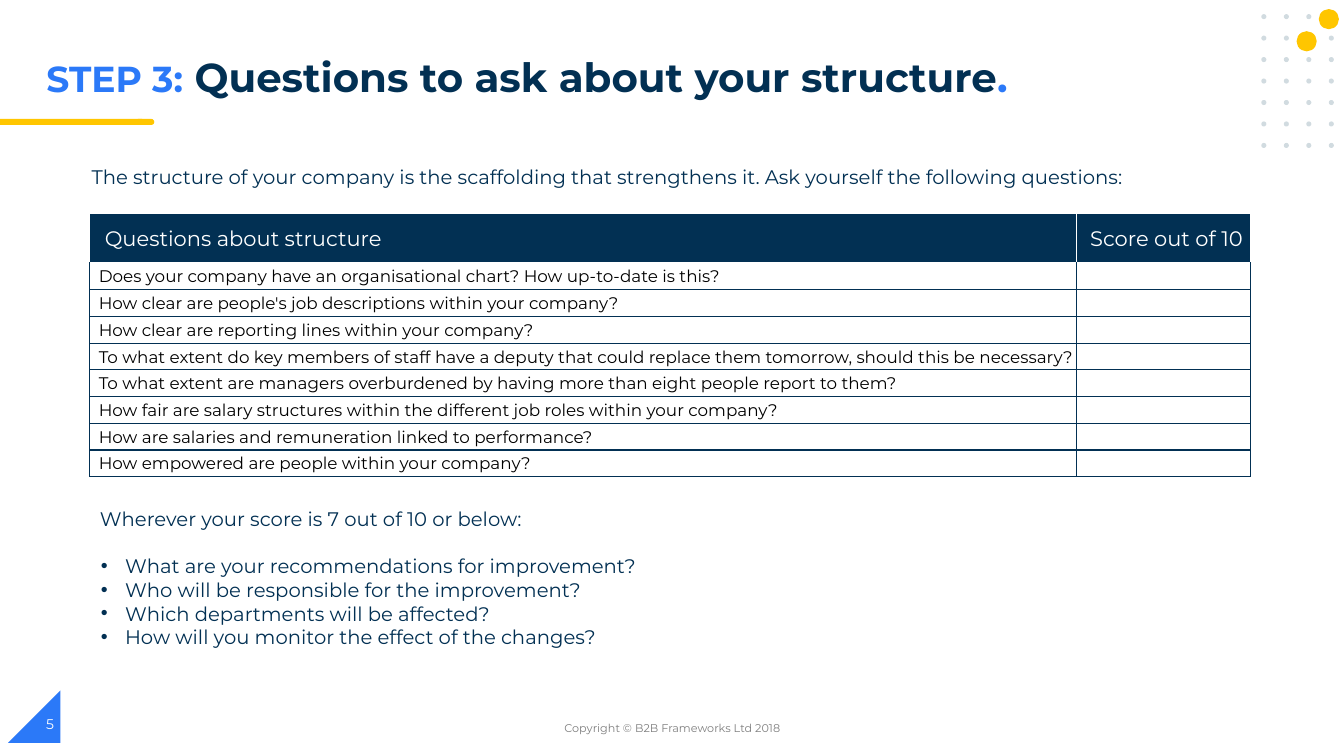
from lxml.etree import SubElement
from pptx import Presentation
from pptx.dml.color import RGBColor
from pptx.enum.shapes import MSO_SHAPE as Shape
from pptx.enum.text import MSO_ANCHOR as Anchor, MSO_AUTO_SIZE as AutoSize, PP_ALIGN as Align
from pptx.oxml.ns import qn
from pptx.util import Inches, Pt

NAVY, BLUE, YELLOW, WHITE = "023053", "2B79F8", "FFC600", "FFFFFF"
BLACK, GREY, DOT = "000000", "7F7F7F", "D1DBE0"
FONT = "Montserrat"

QUESTIONS = [
    "Does your company have an organisational chart? How up-to-date is this?",
    "How clear are people's job descriptions within your company?",
    "How clear are reporting lines within your company?",
    "To what extent do key members of staff have a deputy that could replace them tomorrow, "
    "should this be necessary?",
    "To what extent are managers overburdened by having more than eight people report to them?",
    "How fair are salary structures within the different job roles within your company?",
    "How are salaries and remuneration linked to performance?",
    "How empowered are people within your company?",
]
FOLLOW_UPS = [
    "What are your recommendations for improvement?",
    "Who will be responsible for the improvement?",
    "Which departments will be affected?",
    "How will you monitor the effect of the changes?",
]


def color(value):
    return RGBColor.from_string(value)


def write(para, text, size=14, fill=NAVY, bold=False, align=Align.LEFT):
    """Add a formatted run to a paragraph."""
    para.alignment = align
    run = para.add_run()
    run.text = text
    run.font.name, run.font.size, run.font.bold = FONT, Pt(size), bold
    run.font.color.rgb = color(fill)


def set_bullet(para, char=None):
    """Give the paragraph a hanging bullet, or none."""
    props = para._p.get_or_add_pPr()
    props.set("marL", str(Inches(0.25) if char else 0))
    props.set("indent", str(Inches(-0.24) if char else 0))
    if char:
        SubElement(SubElement(props, qn("a:buClr")), qn("a:srgbClr"), val=NAVY)
        SubElement(props, qn("a:buFont"), typeface="Arial")
        SubElement(props, qn("a:buChar"), char=char)
    else:
        SubElement(props, qn("a:buNone"))


def place(item, left, top, width, height):
    item.left, item.top = Inches(left), Inches(top)
    item.width, item.height = Inches(width), Inches(height)


def prepare(frame, anchor=Anchor.TOP):
    """Set wrapping and anchor, and return the first paragraph."""
    frame.word_wrap, frame.auto_size = True, AutoSize.NONE
    frame.vertical_anchor = anchor
    return frame.paragraphs[0]


def add_text(page, box, text, anchor=Anchor.TOP, **style):
    frame = page.shapes.add_textbox(*map(Inches, box)).text_frame
    write(prepare(frame, anchor), text, **style)


def add_solid(page, kind, box, fill):
    shape = page.shapes.add_shape(kind, *map(Inches, box))
    shape.shadow.inherit = False
    shape.fill.solid()
    shape.fill.fore_color.rgb = color(fill)
    shape.line.fill.background()
    return shape


def add_dot_corner(page, left, top, columns=4, rows=7, size=0.05):
    step_x, step_y = 0.223, 0.213
    for row in range(rows):
        for column in range(columns):
            box = (left + column * step_x, top + row * step_y, size, size)
            add_solid(page, Shape.OVAL, box, DOT)
    for shift_x, shift_y in ((0.57, -0.05), (0.35, 0.17)):
        add_solid(page, Shape.OVAL, (left + shift_x, top + shift_y, 0.2, 0.2), YELLOW)


def add_heading(page, left, top, width, height):
    title = page.shapes.title
    place(title, left, top, width, height)
    para = prepare(title.text_frame)
    para.line_spacing = 0.9
    write(para, "STEP 3:", size=25.8, fill=BLUE, bold=True)
    write(para, " Questions to ask about your structure", size=28.8, bold=True)
    write(para, ".", size=28.8, fill=BLUE, bold=True)
    rule_top = top + 0.66
    add_solid(page, Shape.FLOWCHART_TERMINATOR, (1.34, rule_top, 0.19, 0.06), YELLOW)
    add_solid(page, Shape.RECTANGLE, (0, rule_top, 1.41, 0.06), YELLOW)


def set_borders(cell, **sides):
    props = cell._tc.get_or_add_tcPr()
    for side in "LRTB":
        line = SubElement(props, qn(f"a:ln{side}"), w=str(Pt(1)))
        fill = SubElement(line, qn("a:solidFill"))
        SubElement(fill, qn("a:srgbClr"), val=sides.get(side, NAVY))


def format_cell(cell, left_margin):
    cell.vertical_anchor = Anchor.MIDDLE
    cell.margin_left = Inches(left_margin)
    cell.margin_top = cell.margin_right = Inches(0.01)
    cell.margin_bottom = 0


def add_score_table(page, left, top, widths=(9.79, 1.72), header=0.49, step=0.265):
    height = header + step * len(QUESTIONS)
    box = map(Inches, (left, top, sum(widths), height))
    table = page.shapes.add_table(len(QUESTIONS) + 1, 2, *box).table
    table.first_row = table.horz_banding = False
    for column, width in zip(table.columns, widths):
        column.width = Inches(width)
    for index, row in enumerate(table.rows):
        row.height = Inches(step if index else header)

    headings = (("Questions about structure", 0.15, Align.LEFT),
                ("Score out of 10", 0.07, Align.CENTER))
    for column, (text, margin, align) in enumerate(headings):
        cell = table.cell(0, column)
        format_cell(cell, margin)
        set_borders(cell, L=WHITE, R=WHITE, T=WHITE, B=WHITE)
        cell.fill.solid()
        cell.fill.fore_color.rgb = color(NAVY)
        write(cell.text_frame.paragraphs[0], text, size=15, fill=WHITE, align=align)

    for index, question in enumerate(QUESTIONS, start=1):
        for column in range(2):
            cell = table.cell(index, column)
            format_cell(cell, 0.09)
            set_borders(cell, T=WHITE if index == 1 else NAVY)
            cell.fill.background()
            cell.text_frame.paragraphs[0].font.size = Pt(12)
        write(table.cell(index, 0).text_frame.paragraphs[0], question, size=12, fill=BLACK)


def add_follow_ups(page, left, top, width, height):
    body = page.placeholders[1]
    place(body, left, top, width, height)
    para = prepare(body.text_frame)
    set_bullet(para)
    para.space_before, para.space_after = Pt(0), Pt(17)
    write(para, "Wherever your score is 7 out of 10 or below:")
    for question in FOLLOW_UPS:
        para = body.text_frame.add_paragraph()
        set_bullet(para, "•")
        para.space_before = Pt(0)
        write(para, question)


def add_footer(page, top):
    corner = add_solid(page, Shape.RIGHT_TRIANGLE, (0.08, top, 0.52, 0.52), BLUE)
    corner.element.spPr.xfrm.set("flipH", "1")
    add_text(page, (4.42, top + 0.17, 4.5, 0.4), "Copyright © B2B Frameworks Ltd 2018",
             anchor=Anchor.MIDDLE, size=8, fill=GREY, align=Align.CENTER)
    add_text(page, (0.36, top + 0.13, 3, 0.4), "5", anchor=Anchor.MIDDLE, size=10, fill=WHITE)


def main():
    deck = Presentation()
    deck.slide_width, deck.slide_height = Inches(13.33), Inches(7.5)
    page = deck.slides.add_slide(deck.slide_layouts[1])
    add_dot_corner(page, 12.51, 0.14)
    add_heading(page, 0.36, 0.52, 10.08, 0.6)
    add_text(page, (0.81, 1.59, 11.18, 0.34),
             "The structure of your company is the scaffolding that strengthens it. "
             "Ask yourself the following questions:")
    add_score_table(page, 0.89, 2.12)
    add_follow_ups(page, 0.89, 4.98, 9.55, 1.52)
    add_footer(page, 6.85)
    deck.save("out.pptx")


if __name__ == "__main__":
    main()
